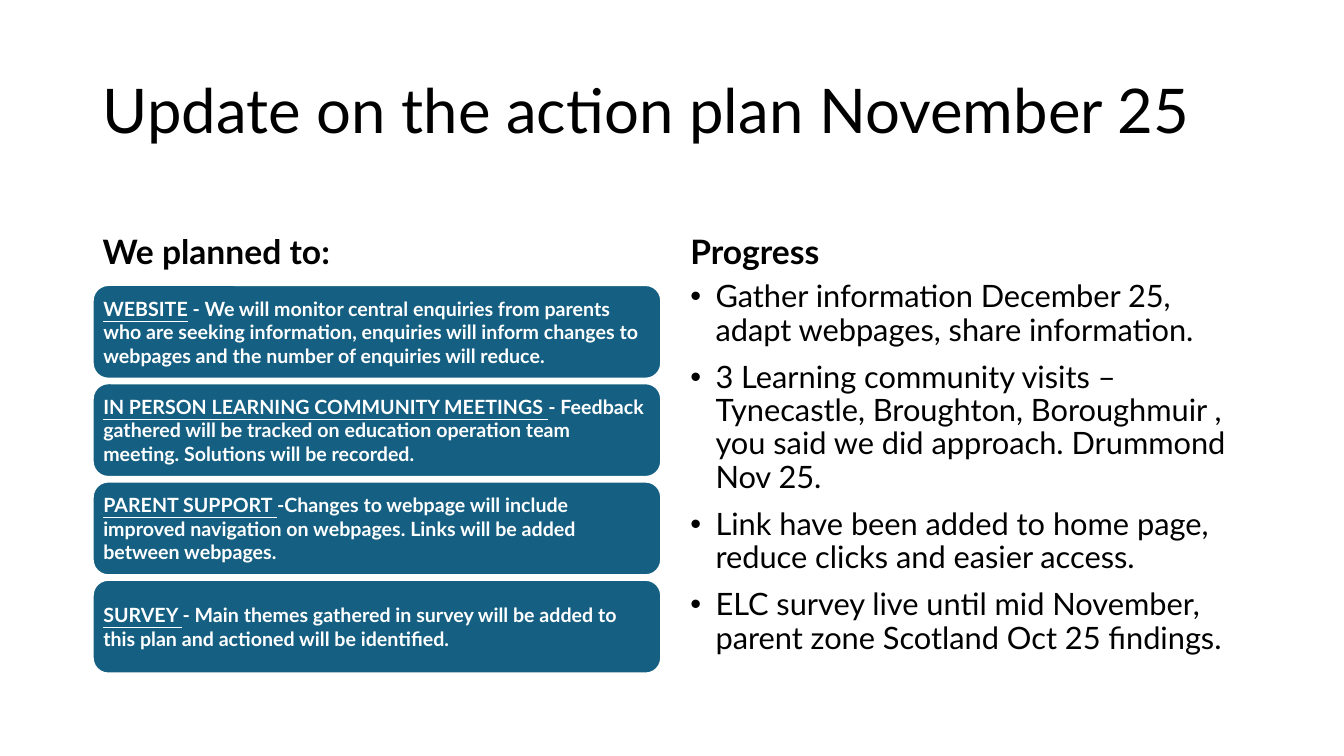
import pptx
import pptx.dml.color
import pptx.enum.shapes
import pptx.enum.text
import pptx.oxml
import pptx.oxml.ns
import pptx.util

ANCHOR = pptx.enum.text.MSO_ANCHOR
ROUNDED = pptx.enum.shapes.MSO_SHAPE.ROUNDED_RECTANGLE
SLIDE_WIDTH = pptx.util.Inches(13.33)
SLIDE_HEIGHT = pptx.util.Inches(7.5)
COLOURS = {"ink": "000000", "card": "156082", "paper": "FFFFFF"}

# Shares of the slide's width and height, in percent
PLAN_LEFT, PLAN_WIDTH = 6.9, 42.3
PROGRESS_LEFT, PROGRESS_WIDTH = 50.63, 42.5
TITLE_TOP, TITLE_WIDTH, TITLE_HEIGHT = 5.33, 86.25, 19.33
HEADING_TOP, HEADING_HEIGHT = 24.55, 12
LIST_TOP, LIST_HEIGHT = 36.55, 53.7
CARD_TOP, CARD_HEIGHT, CARD_PITCH = 37.7, 12.4, 13

PLANS = [
    ("WEBSITE", " - We will monitor central enquiries from parents who are seeking "
     "information, enquiries will inform changes to webpages and the number of "
     "enquiries will reduce."),
    ("IN PERSON LEARNING COMMUNITY MEETINGS ", "- Feedback gathered will be tracked on "
     "education operation team meeting. Solutions will be recorded."),
    ("PARENT SUPPORT ", "-Changes to webpage will include improved navigation on "
     "webpages. Links will be added between webpages."),
    ("SURVEY ", "- Main themes gathered in survey will be added to this plan and "
     "actioned will be identified."),
]
PROGRESS = [
    "Gather information December 25, adapt webpages, share information.",
    "3 Learning community visits – Tynecastle, Broughton, Boroughmuir , you said we "
    "did approach. Drummond Nov 25.",
    "Link have been added to home page, reduce clicks and easier access.",
    "ELC survey live until mid November, parent zone Scotland Oct 25 findings.",
]


def colour(key):
    return pptx.dml.color.RGBColor.from_string(COLOURS[key])


def place(left, top, width, height):
    """Turn percent shares of the slide into lengths."""
    return (int(SLIDE_WIDTH * left / 100), int(SLIDE_HEIGHT * top / 100),
            int(SLIDE_WIDTH * width / 100), int(SLIDE_HEIGHT * height / 100))


def apply(target, formats):
    for attribute, value in formats.items():
        setattr(target, attribute, value)


def style_font(font, size, key, **formats):
    apply(font, {"name": "Lato", "size": pptx.util.Pt(size), **formats})
    font.color.rgb = colour(key)


def add_bullet(paragraph):
    properties = paragraph._p.get_or_add_pPr()
    indent = pptx.util.Inches(0.25)
    properties.set("marL", str(indent))
    properties.set("indent", str(-indent))
    namespace = pptx.oxml.ns.nsdecls("a")
    for markup in (f'<a:buFont {namespace} typeface="Arial"/>',
                   f'<a:buChar {namespace} char="•"/>'):
        properties.append(pptx.oxml.parse_xml(markup))


def add_text(slide, box, lines, size, anchor, bold=False, bulleted=False):
    frame = slide.shapes.add_textbox(*place(*box)).text_frame
    apply(frame, {"word_wrap": True, "vertical_anchor": anchor})
    for index, line in enumerate(lines):
        paragraph = frame.add_paragraph() if index else frame.paragraphs[0]
        paragraph.line_spacing = 0.9
        if index:
            paragraph.space_before = pptx.util.Pt(10)
        if bulleted:
            add_bullet(paragraph)
        run = paragraph.add_run()
        run.text = line
        style_font(run.font, size, "ink", bold=bold)


def add_plan_card(slide, row, topic, detail):
    top = CARD_TOP + row * CARD_PITCH
    card = slide.shapes.add_shape(ROUNDED, *place(PLAN_LEFT, top, PLAN_WIDTH, CARD_HEIGHT))
    card.shadow.inherit = False
    card.fill.solid()
    card.fill.fore_color.rgb = colour("card")
    card.line.color.rgb = colour("paper")
    card.line.width = pptx.util.Pt(1.5)
    frame = card.text_frame
    margins = dict.fromkeys(
        ("margin_left", "margin_top", "margin_right", "margin_bottom"),
        pptx.util.Inches(0.06))
    apply(frame, {"word_wrap": True, "vertical_anchor": ANCHOR.MIDDLE, **margins})
    paragraph = frame.paragraphs[0]
    paragraph.alignment = pptx.enum.text.PP_ALIGN.LEFT
    for words, underlined in ((topic, True), (detail, False)):
        run = paragraph.add_run()
        run.text = words
        style_font(run.font, 14, "paper", bold=True, underline=underlined)


def main():
    presentation = pptx.Presentation()
    apply(presentation, {"slide_width": SLIDE_WIDTH, "slide_height": SLIDE_HEIGHT})
    slide = presentation.slides.add_slide(presentation.slide_layouts[6])

    add_text(slide, (PLAN_LEFT, TITLE_TOP, TITLE_WIDTH, TITLE_HEIGHT),
             ["Update on the action plan November 25"], 44, ANCHOR.MIDDLE)
    for heading, left, width in (("We planned to:", PLAN_LEFT, PLAN_WIDTH),
                                 ("Progress", PROGRESS_LEFT, PROGRESS_WIDTH)):
        add_text(slide, (left, HEADING_TOP, width, HEADING_HEIGHT),
                 [heading], 24, ANCHOR.BOTTOM, bold=True)
    for row, (topic, detail) in enumerate(PLANS):
        add_plan_card(slide, row, topic, detail)
    add_text(slide, (PROGRESS_LEFT, LIST_TOP, PROGRESS_WIDTH, LIST_HEIGHT),
             PROGRESS, 22, ANCHOR.TOP, bulleted=True)

    presentation.save("out.pptx")


if __name__ == "__main__":
    main()
